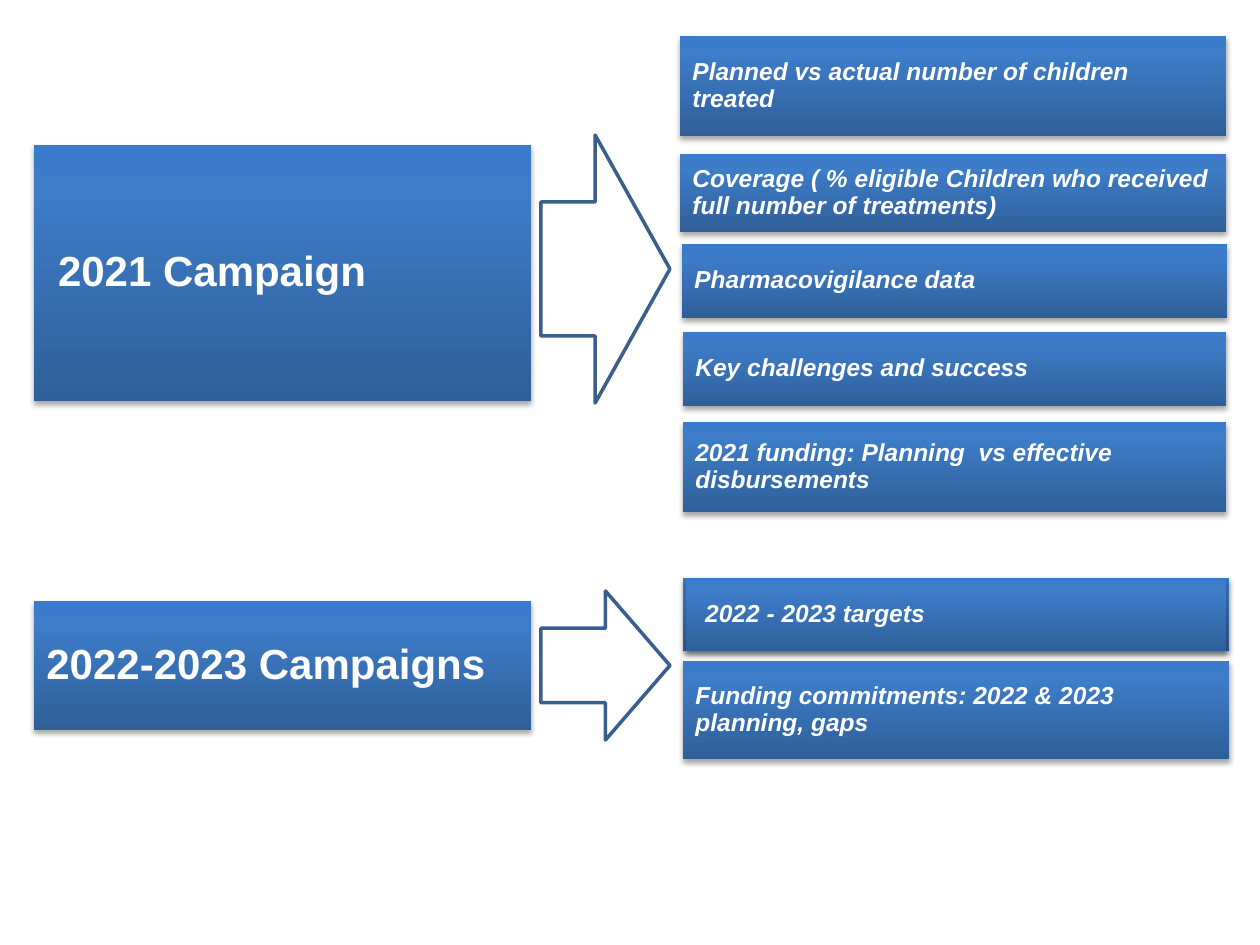
from dataclasses import dataclass

from pptx import Presentation
from pptx import util as u
from pptx.dml.color import RGBColor
from pptx.enum import shapes, text
from pptx.oxml import parse_xml
from pptx.oxml.ns import nsdecls, qn

PX = 914400 / 126  # EMU in one px
WHITE, ARROW_LINE = "FFFFFF", "3A5F8C"
GRADIENT = ((0, "2F5F99"), (80, "3D7CC7"), (100, "3A7CCB"))
PADDING = 0.1
HEADING = {"size": u.Pt(24), "bold": True, "italic": False}
DETAIL = {"size": u.Pt(14), "bold": True, "italic": True}


@dataclass(frozen=True)
class Box:
    left: int
    top: int
    width: int
    height: int
    label: str = ""


@dataclass(frozen=True)
class Arrow:
    top: int
    height: int
    head: float


CAMPAIGNS = (
    Box(34, 145, 497, 256, " 2021 Campaign"),
    Box(34, 601, 497, 129, "2022-2023 Campaigns"),
)
TOPICS = (
    Box(680, 36, 546, 100, "Planned vs actual number of children treated"),
    Box(680, 154, 546, 78,
        "Coverage ( % eligible Children who received full number of treatments)"),
    Box(682, 244, 545, 74, "Pharmacovigilance data"),
    Box(683, 332, 543, 74, "Key challenges and success"),
    Box(683, 422, 543, 90, "2021 funding: Planning  vs effective disbursements"),
    # The targets box sits on a slightly wider backing
    Box(683, 578, 546, 73),
    Box(686, 578, 540, 73, " 2022 - 2023 targets"),
    Box(683, 661, 546, 98, "Funding commitments: 2022 & 2023 planning, gaps"),
)
ARROWS = (Arrow(135, 268, 0.58), Arrow(591, 149, 0.5))
ARROW_LEFT, ARROW_WIDTH = 541, 129


def px(length: int) -> int:
    return round(length * PX)


def rgb(value: str) -> RGBColor:
    return RGBColor.from_string(value)


def set_all(target, values: dict) -> None:
    for name, value in values.items():
        setattr(target, name, value)


def add_preset(slide, kind, left: int, top: int, width: int, height: int):
    shape = slide.shapes.add_shape(kind, px(left), px(top), px(width), px(height))
    shape.shadow.inherit = False
    return shape


def style_box(shape) -> None:
    """Three-stop gradient rising from the bottom, and a soft shadow below."""
    shape.fill.gradient()
    shape.line.fill.background()
    properties = shape._element.spPr
    stops = "".join(
        f'<a:gs pos="{position * 1000}"><a:srgbClr val="{color}"/></a:gs>'
        for position, color in GRADIENT
    )
    gradient = parse_xml(
        f'<a:gradFill {nsdecls("a")} rotWithShape="1"><a:gsLst>{stops}</a:gsLst>'
        '<a:lin ang="16200000" scaled="0"/></a:gradFill>'
    )
    properties.replace(properties.find(qn("a:gradFill")), gradient)
    properties.find(qn("a:effectLst")).append(parse_xml(
        f'<a:outerShdw {nsdecls("a")} blurRad="{u.Pt(3.1)}" dist="{u.Pt(1.8)}" '
        'dir="5400000" rotWithShape="0"><a:srgbClr val="000000">'
        '<a:alpha val="35000"/></a:srgbClr></a:outerShdw>'
    ))


def add_box(slide, box: Box, font: dict) -> None:
    shape = add_preset(slide, shapes.MSO_SHAPE.RECTANGLE,
                       box.left, box.top, box.width, box.height)
    style_box(shape)
    if not box.label:
        return
    frame = shape.text_frame
    set_all(frame, {"word_wrap": True, "vertical_anchor": text.MSO_ANCHOR.MIDDLE})
    set_all(frame, {f"margin_{side}": u.Inches(PADDING)
                    for side in ("left", "top", "right", "bottom")})
    paragraph = frame.paragraphs[0]
    set_all(paragraph, {"alignment": text.PP_ALIGN.LEFT, "line_spacing": 0.9})
    run = paragraph.add_run()
    run.text = box.label
    set_all(run.font, {"name": "Arial", **font})
    run.font.color.rgb = rgb(WHITE)


def add_arrow(slide, arrow: Arrow) -> None:
    shape = add_preset(slide, shapes.MSO_SHAPE.RIGHT_ARROW,
                       ARROW_LEFT, arrow.top, ARROW_WIDTH, arrow.height)
    shape.adjustments[0] = 0.5
    shape.adjustments[1] = arrow.head
    shape.fill.solid()
    shape.fill.fore_color.rgb = rgb(WHITE)
    shape.line.color.rgb = rgb(ARROW_LINE)
    shape.line.width = u.Pt(2)


def main() -> None:
    presentation = Presentation()
    presentation.slide_width, presentation.slide_height = px(1260), px(945)
    slide = presentation.slides.add_slide(presentation.slide_layouts[6])

    # Campaigns on the left, their topics on the right
    for boxes, font in ((CAMPAIGNS, HEADING), (TOPICS, DETAIL)):
        for box in boxes:
            add_box(slide, box, font)

    # Arrows from each campaign to its topics
    for arrow in ARROWS:
        add_arrow(slide, arrow)

    presentation.save("out.pptx")


if __name__ == "__main__":
    main()
